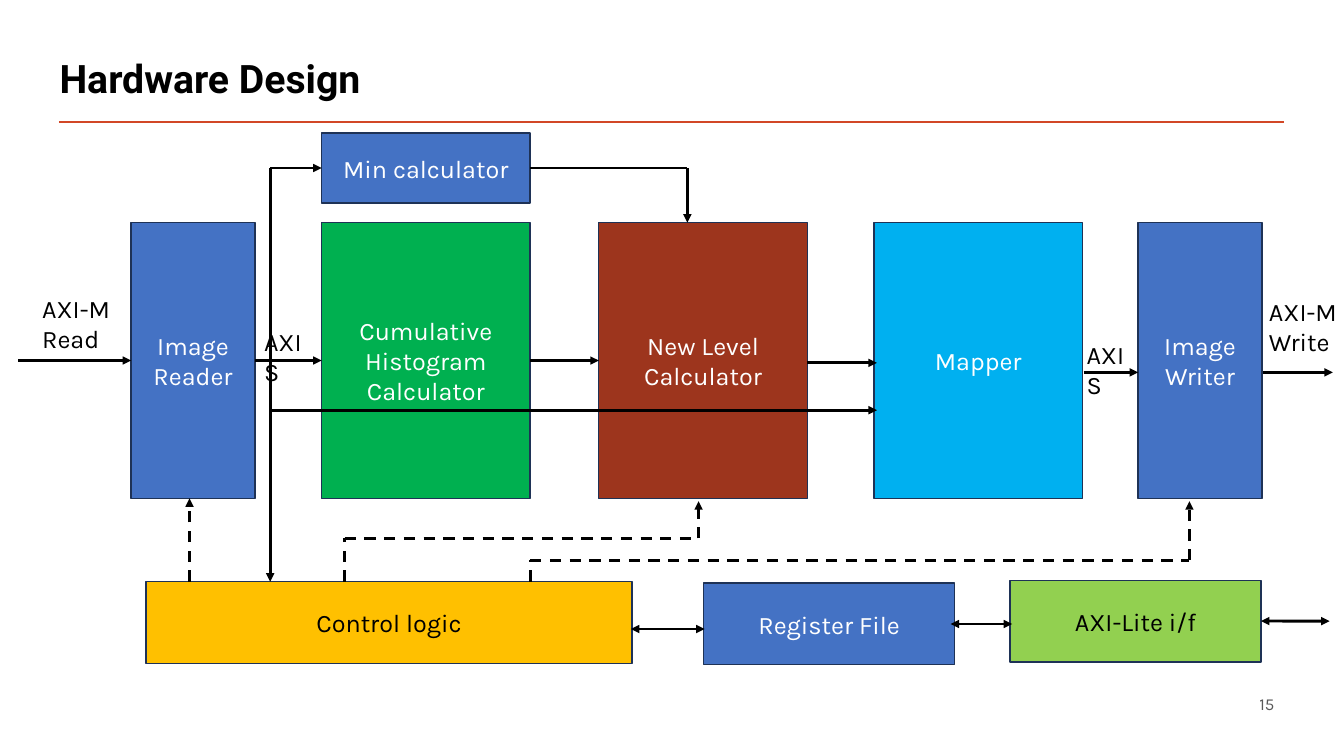
from dataclasses import dataclass
from typing import Any

from lxml.etree import SubElement
from pptx import Presentation
from pptx.dml.color import RGBColor
from pptx.enum.dml import MSO_LINE
from pptx.enum.shapes import MSO_CONNECTOR, MSO_SHAPE
from pptx.enum.text import MSO_ANCHOR, PP_ALIGN
from pptx.oxml.ns import qn
from pptx.util import Pt


class Theme:
    heading_font, body_font = "Roboto", "Karla"
    title_size, body_size, number_size = 28, 18, 12
    wire_width, min_wire_width, border_width = 2, 1.75, 1
    black, white, gray = "000000", "FFFFFF", "595959"
    accent, border = "D24726", "1E3256"
    blue, green, rust = "4472C4", "00B050", "9D351D"
    sky, amber, lime = "00B0F0", "FFC000", "92D050"


TOP, LEFT, BOTTOM, RIGHT = range(4)


def style(paragraph, size=Theme.body_size, color=Theme.black, font=Theme.body_font):
    paragraph.font.size = Pt(size)
    paragraph.font.name = font
    paragraph.font.color.rgb = RGBColor.from_string(color)


@dataclass
class Region:
    """Part of the slide; everything in it is placed from its top left corner."""
    shapes: Any
    left: float
    top: float
    width: float
    height: float

    def text(self, x, y, width, height, *lines, anchor=MSO_ANCHOR.TOP, **look):
        frame = self.shapes.add_textbox(
            Pt(self.left + x), Pt(self.top + y), Pt(width), Pt(height)).text_frame
        frame.word_wrap = True
        frame.vertical_anchor = anchor
        frame.text = "\n".join(lines)
        for paragraph in frame.paragraphs:
            style(paragraph, **look)
        return frame.paragraphs[0]

    def block(self, x, y, width, height, caption, fill, color=Theme.white):
        block = self.shapes.add_shape(
            MSO_SHAPE.RECTANGLE, Pt(self.left + x), Pt(self.top + y), Pt(width), Pt(height))
        block.shadow.inherit = False
        block.fill.solid()
        block.fill.fore_color.rgb = RGBColor.from_string(fill)
        block.line.color.rgb = RGBColor.from_string(Theme.border)
        block.line.width = Pt(Theme.border_width)
        frame = block.text_frame
        frame.word_wrap = True
        frame.vertical_anchor = MSO_ANCHOR.MIDDLE
        frame.text = caption
        frame.paragraphs[0].alignment = PP_ALIGN.CENTER
        style(frame.paragraphs[0], color=color)
        return block

    def wire(self, start, end, arrows="end", source=None, target=None,
             dashed=False, color=Theme.black, width=Theme.wire_width):
        """Draw a line; source and target are (block, side) pairs to join."""
        wire = self.shapes.add_connector(
            MSO_CONNECTOR.STRAIGHT,
            Pt(self.left + start[0]), Pt(self.top + start[1]),
            Pt(self.left + end[0]), Pt(self.top + end[1]))
        if source:
            wire.begin_connect(*source)
        if target:
            wire.end_connect(*target)
        wire.line.color.rgb = RGBColor.from_string(color)
        wire.line.width = Pt(width)
        if dashed:
            wire.line.dash_style = MSO_LINE.DASH
        outline = wire.line._get_or_add_ln()
        if arrows == "both":
            SubElement(outline, qn("a:headEnd"), type="triangle")
        if arrows in ("end", "both"):
            SubElement(outline, qn("a:tailEnd"), type="triangle")
        SubElement(wire._element.spPr, qn("a:effectLst"))

    def route(self, *points, **look):
        """Draw a chain of wires with an arrowhead on the last one."""
        for index, (start, end) in enumerate(zip(points, points[1:]), 2):
            self.wire(start, end, "end" if index == len(points) else "none", **look)


def draw_header(region):
    region.wire((6.5, region.height), (882, region.height), "none", color=Theme.accent)
    title = region.text(0, 0, 720, 50.4, "Hardware Design", anchor=MSO_ANCHOR.MIDDLE,
                        size=Theme.title_size, font=Theme.heading_font)
    title.font.bold = True
    title.line_spacing = 0.9


def draw_page_number(region):
    number = region.text(0, 0, region.width, region.height, "15", anchor=MSO_ANCHOR.MIDDLE,
                         size=Theme.number_size, color=Theme.gray)
    number.alignment = PP_ALIGN.RIGHT


def draw_datapath(region, bus_x):
    """Draw the pixel pipeline, with the reader's bus running up at bus_x."""
    stage_top, stage_height, narrow, wide = 64, 197, 88.6, 149
    middle = stage_top + stage_height / 2
    min_middle, writer_y, bypass_y = 25, 171, 198

    def stage(x, width, caption, fill):
        return region.block(x, stage_top, width, stage_height, caption, fill)

    reader = stage(93.6, narrow, "Image Reader", Theme.blue)
    histogram = stage(229.7, wide, "Cumulative Histogram Calculator", Theme.green)
    level = stage(427.7, wide, "New Level Calculator", Theme.rust)
    stage(624.3, wide, "Mapper", Theme.sky)
    stage(812.9, narrow, "Image Writer", Theme.blue)
    minimum = region.block(229.7, 0, wide, 2 * min_middle, "Min calculator", Theme.blue)

    region.wire((13, middle), (93.6, middle), target=(reader, LEFT))
    region.wire((182.2, middle), (229.7, middle),
                source=(reader, RIGHT), target=(histogram, LEFT))
    region.wire((378.7, middle), (427.7, middle),
                source=(histogram, RIGHT), target=(level, LEFT))
    region.wire((576.7, 164.2), (626.4, 164.2))
    region.wire((774, writer_y), (812.9, writer_y))
    region.wire((902, writer_y), (952, writer_y))
    region.wire((bus_x, bypass_y), (626.4, bypass_y))

    region.wire((bus_x, middle), (bus_x, min_middle), "none")
    region.wire((bus_x, min_middle), (229.7, min_middle),
                target=(minimum, LEFT), width=Theme.min_wire_width)
    region.wire((378.7, min_middle), (491, min_middle), "none",
                source=(minimum, RIGHT), width=Theme.min_wire_width)
    region.wire((491, min_middle), (491, stage_top))

    region.text(23, 111, 65.5, 51, "AXI-M", "Read")
    region.text(181.5, 134.7, 51.8, 29, "AXIS")
    region.text(769, 144, 51.8, 29, "AXIS")
    region.text(899.3, 113, 65.5, 51, "AXI-M", "Write")


def draw_control(region, bus_x, bus_rise):
    """Draw the control row; the bus arrives from bus_rise above the region."""
    row_top, row_height, unit = 59.5, 58.3, 179.3
    region.block(104.4, row_top, 347, row_height, "Control logic", Theme.amber, Theme.black)
    region.block(502.6, row_top + 1, unit, row_height, "Register File", Theme.blue)
    lite = region.block(721.4, row_top - 1, unit, row_height, "AXI-Lite i/f",
                        Theme.lime, Theme.black)

    region.wire((bus_x, -bus_rise), (bus_x, row_top))
    region.wire((450.7, 93.3), (503.3, 93.3), "both")
    region.wire((679, 89.7), (723, 89.7), "both")
    region.wire((900.7, 87.7), (949.7, 87.7), "both", source=(lite, RIGHT))

    region.route((135.4, row_top), (135.4, 0), dashed=True)
    for exit_x, turn_y, stage_x in ((246.2, 28.5, 499), (378.7, 44.3, 849.6)):
        region.route((exit_x, row_top), (exit_x, turn_y), (stage_x, turn_y), (stage_x, 2),
                     dashed=True)


def main():
    deck = Presentation()
    deck.slide_width, deck.slide_height = Pt(960), Pt(540)
    shapes = deck.slides.add_slide(deck.slide_layouts[6]).shapes
    bus_x = 193
    draw_header(Region(shapes, 35.5, 32.4, 889, 54.7))
    draw_datapath(Region(shapes, 0, 95, 960, 261), bus_x)
    draw_control(Region(shapes, 0, 356, 960, 119), bus_x, bus_rise=98.5)
    draw_page_number(Region(shapes, 659.5, 488, 257.8, 28.8))
    deck.save("out.pptx")


if __name__ == "__main__":
    main()
